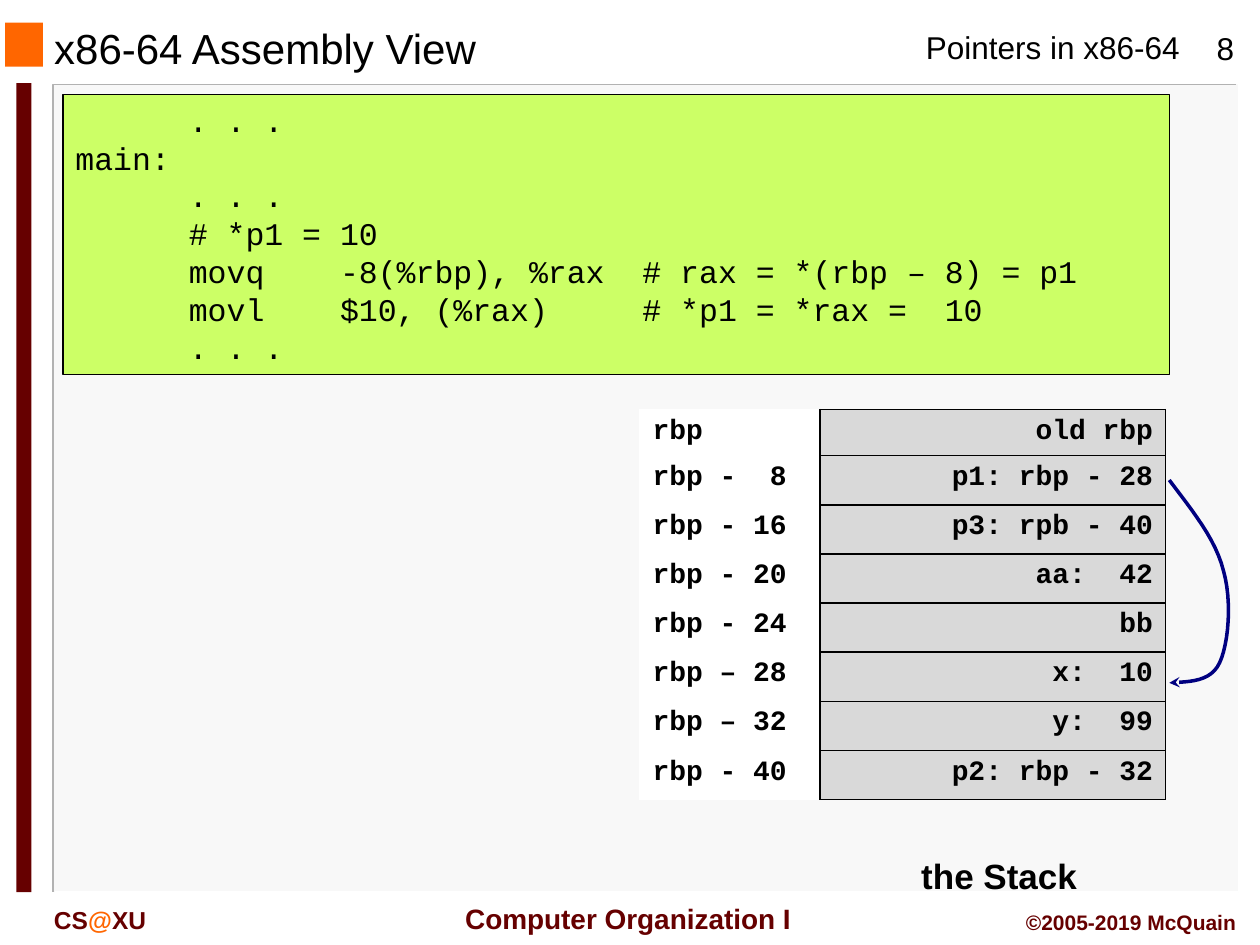
from lxml import etree
from pptx import Presentation
from pptx.dml.color import RGBColor
from pptx.enum import shapes, text
from pptx.oxml.ns import qn
from pptx.util import Inches, Pt

BLACK = RGBColor(0, 0, 0)
WHITE = RGBColor(0xFF, 0xFF, 0xFF)
PANEL = RGBColor(0xF8, 0xF8, 0xF8)
EDGE = RGBColor(0xB2, 0xB2, 0xB2)
ORANGE = RGBColor(0xFF, 0x66, 0x00)
MAROON = RGBColor(0x66, 0x00, 0x00)
LIME = RGBColor(0xCC, 0xFF, 0x66)
GRAY = RGBColor(0xD9, 0xD9, 0xD9)
NAVY = RGBColor(0x00, 0x00, 0x80)

LEFT, CENTER, RIGHT = (text.PP_ALIGN.LEFT, text.PP_ALIGN.CENTER,
                       text.PP_ALIGN.RIGHT)

CODE = [
    "\t. . .",
    "main:",
    "\t. . .",
    "\t# *p1 = 10",
    "\tmovq\t-8(%rbp), %rax\t# rax = *(rbp – 8) = p1",
    "\tmovl\t$10, (%rax)\t# *p1 = *rax =  10",
    "\t. . .",
]
CODE_TABS = [0.9, 2.1, 4.5]

STACK = [
    ("rbp", "old rbp"),
    ("rbp -  8", "p1: rbp - 28"),
    ("rbp - 16", "p3: rpb - 40"),
    ("rbp - 20", "aa:  42"),
    ("rbp - 24", "bb"),
    ("rbp – 28", "x:  10"),
    ("rbp – 32", "y:  99"),
    ("rbp - 40", "p2: rbp - 32"),
]

# Bezier pieces of the pointer arrow: start, two controls, end
CURVE = [
    ((9.28, 3.81), (9.46, 4.05), (9.65, 4.28), (9.71, 4.53)),
    ((9.71, 4.53), (9.78, 4.77), (9.75, 5.11), (9.68, 5.26)),
    ((9.68, 5.26), (9.61, 5.41), (9.45, 5.41), (9.28, 5.42)),
]


def style(run, size, color=BLACK, bold=False, face="Arial"):
    font = run.font
    font.name, font.size, font.bold = face, Pt(size), bold
    font.color.rgb = color


def add_rect(slide, box, fill, line=None):
    rect = slide.shapes.add_shape(shapes.MSO_SHAPE.RECTANGLE,
                                  *map(Inches, box))
    rect.shadow.inherit = False
    rect.fill.solid()
    rect.fill.fore_color.rgb = fill
    if line is None:
        rect.line.fill.background()
    else:
        rect.line.color.rgb = line
        rect.line.width = Pt(0.75)
    return rect


def add_label(slide, box, parts, size, align=LEFT, bold=False, wrap=True):
    """Put one line of (words, color) parts in a text box."""
    frame = slide.shapes.add_textbox(*map(Inches, box)).text_frame
    frame.word_wrap = wrap
    para = frame.paragraphs[0]
    para.alignment = align
    for words, color in parts:
        run = para.add_run()
        run.text = words
        style(run, size, color, bold)


def add_path(slide, points, color, width):
    spots = [(Inches(x), Inches(y)) for x, y in points]
    pen = slide.shapes.build_freeform(*spots[0])
    pen.add_line_segments(spots[1:], close=False)
    path = pen.convert_to_shape()
    path.shadow.inherit = False
    path.fill.background()
    path.line.color.rgb = color
    path.line.width = Pt(width)
    return path


def bezier(piece, steps=12):
    for i in range(1, steps + 1):
        t = i / steps
        mix = ((1 - t) ** 3, 3 * t * (1 - t) ** 2, 3 * t * t * (1 - t), t ** 3)
        yield tuple(sum(m * p[axis] for m, p in zip(mix, piece))
                    for axis in (0, 1))


def add_arrow(slide):
    points = [CURVE[0][0]]
    for piece in CURVE:
        points.extend(bezier(piece))
    arrow = add_path(slide, points, NAVY, 2)
    etree.SubElement(arrow.line._get_or_add_ln(), qn("a:tailEnd"),
                     type="stealth")


def add_code(slide):
    box = add_rect(slide, (0.5, 0.75, 8.78, 2.22), LIME, BLACK)
    frame = box.text_frame
    frame.word_wrap = True
    frame.vertical_anchor = text.MSO_ANCHOR.TOP
    frame.text = "\n".join(CODE)
    for para in frame.paragraphs:
        para.alignment = LEFT
        tabs = etree.SubElement(para._p.get_or_add_pPr(), qn("a:tabLst"))
        for stop in CODE_TABS:
            etree.SubElement(tabs, qn("a:tab"), pos=str(Inches(stop)),
                             algn="l")
        style(para.runs[0], 18, face="Courier New")


def set_border(cell):
    props = cell._tc.get_or_add_tcPr()
    for i, side in enumerate(("a:lnL", "a:lnR", "a:lnT", "a:lnB")):
        line = etree.Element(qn(side), w=str(Pt(1)))
        fill = etree.SubElement(line, qn("a:solidFill"))
        etree.SubElement(fill, qn("a:srgbClr"), val=str(BLACK))
        props.insert(i, line)


def add_stack(slide):
    table = slide.shapes.add_table(
        len(STACK), 2, Inches(5.08), Inches(3.25), Inches(4.17),
        Inches(3.09)).table
    table.first_row = table.horz_banding = False
    for col, width in zip(table.columns, (1.43, 2.74)):
        col.width = Inches(width)
    for i, row in enumerate(table.rows):
        row.height = Inches(0.39 if i else 0.36)
        for cell, words, fill, align in zip(row.cells, STACK[i],
                                            (WHITE, GRAY), (LEFT, RIGHT)):
            cell.fill.solid()
            cell.fill.fore_color.rgb = fill
            cell.text_frame.text = words
            para = cell.text_frame.paragraphs[0]
            para.alignment = align
            style(para.runs[0], 16, bold=True, face="Courier New")
        set_border(row.cells[1])


def set_title(slide):
    title = slide.shapes.title
    title.left, title.top = Inches(0.33), Inches(0.19)
    title.width, title.height = Inches(6.33), Inches(0.38)
    frame = title.text_frame
    frame.text = "x86-64 Assembly View"
    frame.vertical_anchor = text.MSO_ANCHOR.MIDDLE
    frame.paragraphs[0].alignment = LEFT
    style(frame.paragraphs[0].runs[0], 24)


def add_frame(slide):
    # Panel with its bevel, then the accent blocks
    add_rect(slide, (0.43, 0.67, 9.4, 6.41), PANEL)
    add_path(slide, [(9.81, 0.67), (0.42, 0.67), (0.42, 7.08)], EDGE, 1)
    add_path(slide, [(9.83, 0.67), (9.83, 7.08), (0.44, 7.08)], WHITE, 1)
    add_rect(slide, (0.04, 0.18, 0.3, 0.35), ORANGE)
    add_rect(slide, (0.13, 0.66, 0.12, 6.42), MAROON)
    # Header and footer
    add_label(slide, (7.25, 0.17, 2.24, 0.4),
              [("Pointers in x86-64", BLACK)], 18, wrap=False)
    add_label(slide, (9.39, 0.18, 0.67, 0.4), [("8", BLACK)], 18, CENTER)
    add_label(slide, (3.53, 7.11, 2.91, 0.37),
              [("Computer Organization I", MAROON)], 16, CENTER, True, False)
    add_label(slide, (0.33, 7.13, 1.5, 0.33),
              [("CS", MAROON), ("@", ORANGE), ("XU", MAROON)], 14, bold=True)
    add_label(slide, (7.83, 7.17, 2.08, 0.3),
              [("©2005-2019 McQuain", MAROON)], 12, RIGHT, True)


def main():
    deck = Presentation()
    deck.slide_width, deck.slide_height = Inches(10), Inches(7.5)
    slide = deck.slides.add_slide(deck.slide_layouts[5])
    add_frame(slide)
    set_title(slide)
    add_code(slide)
    add_label(slide, (6.95, 6.73, 1.96, 0.44), [("the Stack", BLACK)],
              20, CENTER, True)
    add_arrow(slide)
    add_stack(slide)
    deck.save("out.pptx")


if __name__ == "__main__":
    main()
